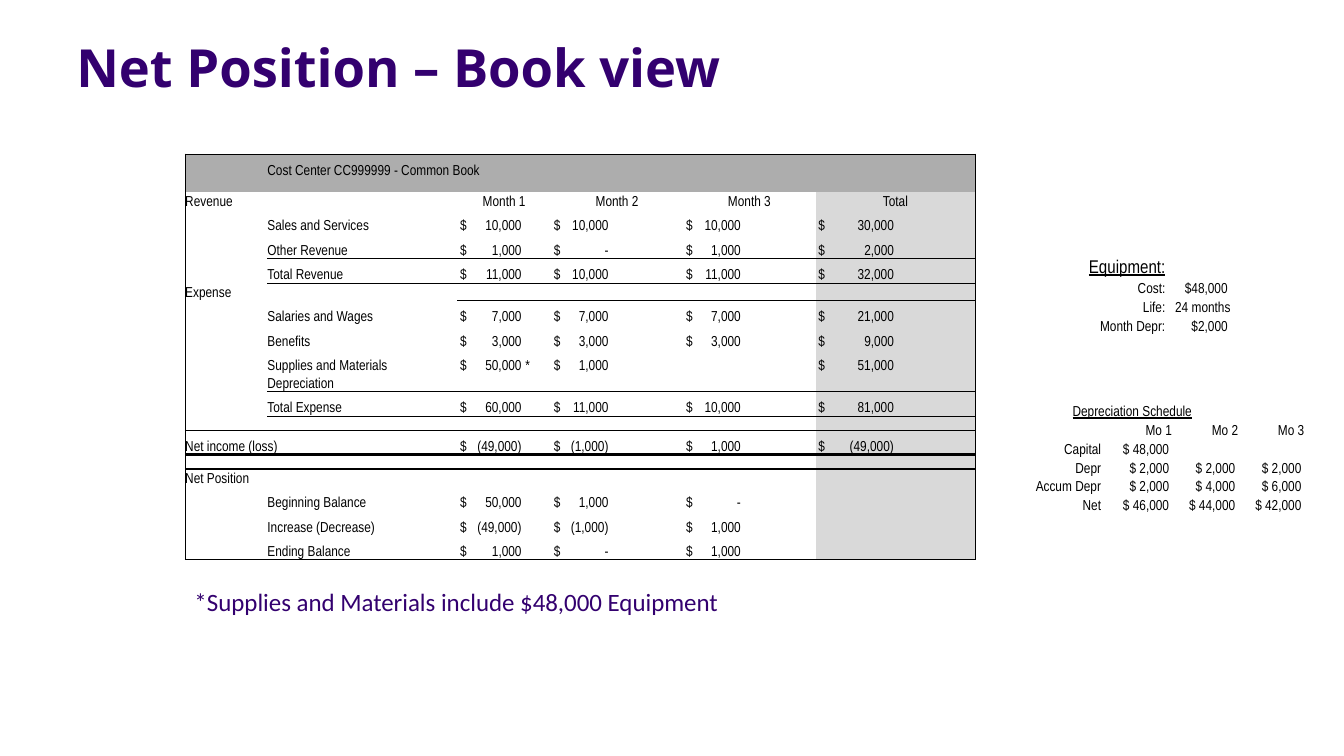
from collections import namedtuple

from lxml import etree
from pptx import Presentation
from pptx.dml.color import RGBColor
from pptx.enum.text import MSO_ANCHOR, PP_ALIGN
from pptx.oxml.ns import qn
from pptx.util import Inches, Pt

LEFT, CENTER, RIGHT = PP_ALIGN.LEFT, PP_ALIGN.CENTER, PP_ALIGN.RIGHT
BOTTOM = MSO_ANCHOR.BOTTOM
GRID = Inches(0.01)
SLIDE_COLUMNS, SLIDE_ROWS = 1422, 800
PLAIN_TABLE = "{2D5ABB26-0587-4C30-8999-92F81FD0307C}"
COLORS = {"purple": "33006F", "black": "000000", "header": "ADADAD", "total": "D9D9D9"}

Box = namedtuple("Box", "left top width height")

BODY = {"name": "Arial Narrow", "size": Pt(11), "color": "black"}
UNDERLINED = {**BODY, "underline": True}
HEADING = {**UNDERLINED, "size": Pt(14)}
TITLE = {"name": "Open Sans", "size": Pt(40), "bold": True, "color": "purple"}
NOTE = {"name": "Calibri", "size": Pt(19), "color": "purple"}

BOOK_COLUMNS = [87, 201, 99, 140, 140, 169]
BOOK_TABS = {2: 65, 3: 58, 4: 58, 5: 80}
BOOK_ROWS = [
    (26, "", "Cost Center CC999999 - Common Book"),
    (14,),
    (14, "Revenue", "", "Month 1", "Month 2", "Month 3", "Total"),
    (26, "", "Sales and Services", "10,000", "10,000", "10,000", "30,000"),
    (26, "", "Other Revenue", "1,000", "-", "1,000", "2,000"),
    (26, "", "Total Revenue", "11,000", "10,000", "11,000", "32,000"),
    (15, "Expense"),
    (26, "", "Salaries and Wages", "7,000", "7,000", "7,000", "21,000"),
    (26, "", "Benefits", "3,000", "3,000", "3,000", "9,000"),
    (26, "", "Supplies and Materials", "50,000\t*", "1,000", "", "51,000"),
    (18, "", "Depreciation"),
    (26, "", "Total Expense", "60,000", "11,000", "10,000", "81,000"),
    (15,),
    (26, "Net income (loss)", "", "(49,000)", "(1,000)", "1,000", "(49,000)"),
    (15,),
    (15, "Net Position"),
    (26, "", "Beginning Balance", "50,000", "1,000", "-"),
    (26, "", "Increase (Decrease)", "(49,000)", "(1,000)", "1,000"),
    (26, "", "Ending Balance", "1,000", "-", "1,000"),
]
HEADER_ROWS, MONTH_ROW = 2, 2
RULES = {4: (1, 0.5), 5: (2, 0.5), 10: (1, 0.5), 11: (1, 0.5),
         12: (0, 0.5), 13: (0, 2), 18: (0, 0.5)}

EQUIPMENT = [
    ("Equipment:", ""),
    ("Cost:", "$48,000"),
    ("Life:", "24 months"),
    ("Month Depr:", "$2,000"),
]
SCHEDULE = [
    ("Depreciation Schedule", "", "", ""),
    ("", "Mo 1", "Mo 2", "Mo 3"),
    ("Capital", "$ 48,000", "", ""),
    ("Depr", "$ 2,000", "$ 2,000", "$ 2,000"),
    ("Accum Depr", "$ 2,000", "$ 4,000", "$ 6,000"),
    ("Net", "$ 46,000", "$ 44,000", "$ 42,000"),
]


def set_all(target, values):
    """Set each named attribute on the target."""
    for name, value in values.items():
        if name == "color":
            target.color.rgb = RGBColor.from_string(COLORS[value])
        else:
            setattr(target, name, value)


def write(para, text, style):
    """Write one styled span, or keep an empty line small."""
    if text:
        span = para.add_run()
        span.text = text
        set_all(span.font, style)
    else:
        etree.SubElement(para._p, qn("a:endParaRPr"), sz="600")


def add_text(page, box, text, style, spacing=1.0):
    """Place a wrapped line of text in the box."""
    frame = page.shapes.add_textbox(*(GRID * length for length in box)).text_frame
    frame.word_wrap = True
    frame.paragraphs[0].line_spacing = spacing
    write(frame.paragraphs[0], text, style)


def add_plain_table(page, box, columns, rows):
    """Place a table without style, sized by grid columns and rows."""
    holder = page.shapes.add_table(
        len(rows), len(columns), *(GRID * length for length in box))
    holder.element.find(".//" + qn("a:tableStyleId")).text = PLAIN_TABLE
    table = holder.table
    table.first_row = table.horz_banding = False
    for column, width in zip(table.columns, columns):
        column.width = GRID * width
    for row, height in zip(table.rows, rows):
        row.height = GRID * height
    return table


def fill_cell(cell, text, style, align=LEFT, margins=(0, 0, 0, 0), tabs=(), fill=None):
    """Set the margins, text and fill of a cell."""
    names = ("margin_left", "margin_top", "margin_right", "margin_bottom")
    set_all(cell, {name: GRID * size for name, size in zip(names, margins)})
    cell.vertical_anchor = BOTTOM
    para = cell.text_frame.paragraphs[0]
    para.alignment = align
    if tabs:
        stops = etree.SubElement(para._p.get_or_add_pPr(), qn("a:tabLst"))
        for place, kind in tabs:
            etree.SubElement(stops, qn("a:tab"), pos=str(GRID * place), algn=kind)
    write(para, text, style)
    if fill:
        cell.fill.solid()
        cell.fill.fore_color.rgb = RGBColor.from_string(COLORS[fill])
    else:
        cell.fill.background()


def add_borders(cell, edges):
    """Draw the given edges of a cell, each with its width in points."""
    properties = cell._tc.get_or_add_tcPr()
    for edge in "LRTB":
        if edge in edges:
            line = etree.SubElement(
                properties, qn("a:ln" + edge), w=str(Pt(edges[edge])))
            paint = etree.SubElement(line, qn("a:solidFill"))
            etree.SubElement(paint, qn("a:srgbClr"), val=COLORS["black"])


def book_edges(row, column):
    """Return the outline and rule edges of a book cell."""
    edges = {}
    if column == 0:
        edges["L"] = 0.5
    if column == len(BOOK_COLUMNS) - 1:
        edges["R"] = 0.5
    if row == 0:
        edges["T"] = 0.5
    for edge, source in (("T", row - 1), ("B", row)):
        if source in RULES and column >= RULES[source][0]:
            edges[edge] = RULES[source][1]
    return edges


def add_book(page, box):
    """Build the cost center statement."""
    table = add_plain_table(page, box, BOOK_COLUMNS, [row[0] for row in BOOK_ROWS])
    for r, (_, *texts) in enumerate(BOOK_ROWS):
        texts += [""] * (len(BOOK_COLUMNS) - len(texts))
        for c, text in enumerate(texts):
            cell = table.cell(r, c)
            add_borders(cell, book_edges(r, c))
            fill = "header" if r < HEADER_ROWS else "total" if c == 5 else None
            layout = {"fill": fill}
            if r == MONTH_ROW and c > 1:
                layout["align"] = CENTER
            elif c in BOOK_TABS and text:
                text = "$\t" + text
                layout["margins"] = (3, 0, 0, 0)
                layout["tabs"] = [(BOOK_TABS[c], "r"), (BOOK_TABS[c] + 4, "l")]
            fill_cell(cell, text, BODY, **layout)
        if texts[0]:
            table.cell(r, 0).merge(table.cell(r, 1))
    table.cell(0, 1).merge(table.cell(0, 2))


def add_side_table(page, box, columns, rows, data, heading):
    """Build a right-aligned table whose first cell is its heading."""
    table = add_plain_table(page, box, columns, rows)
    spans = len(columns) > 2
    for r, texts in enumerate(data):
        for c, text in enumerate(texts):
            right = 4 if text.startswith("$") else 1
            align = CENTER if spans and r == 0 else RIGHT
            style = heading if r == 0 else BODY
            fill_cell(table.cell(r, c), text, style, align, (1, 1, right, 0))
    if spans:
        table.cell(0, 0).merge(table.cell(0, len(columns) - 1))


def main():
    """Build the deck and save it."""
    deck = Presentation()
    deck.slide_width, deck.slide_height = GRID * SLIDE_COLUMNS, GRID * SLIDE_ROWS
    page = deck.slides.add_slide(deck.slide_layouts[6])
    add_text(page, Box(71, 40, 1300, 52), "Net Position – Book view", TITLE, 0.9)
    add_book(page, Box(196, 163, 837, 420))
    add_text(page, Box(196, 616, 626, 42),
             "*Supplies and Materials include $48,000 Equipment", NOTE)
    add_side_table(page, Box(1094, 268, 208, 86), [140, 69], [26, 20, 20, 20],
                   EQUIPMENT, HEADING)
    add_side_table(page, Box(1015, 425, 366, 119), [151, 75, 70, 70],
                   [19, 19, 20, 20, 20, 20], SCHEDULE, UNDERLINED)
    deck.save("out.pptx")


if __name__ == "__main__":
    main()
